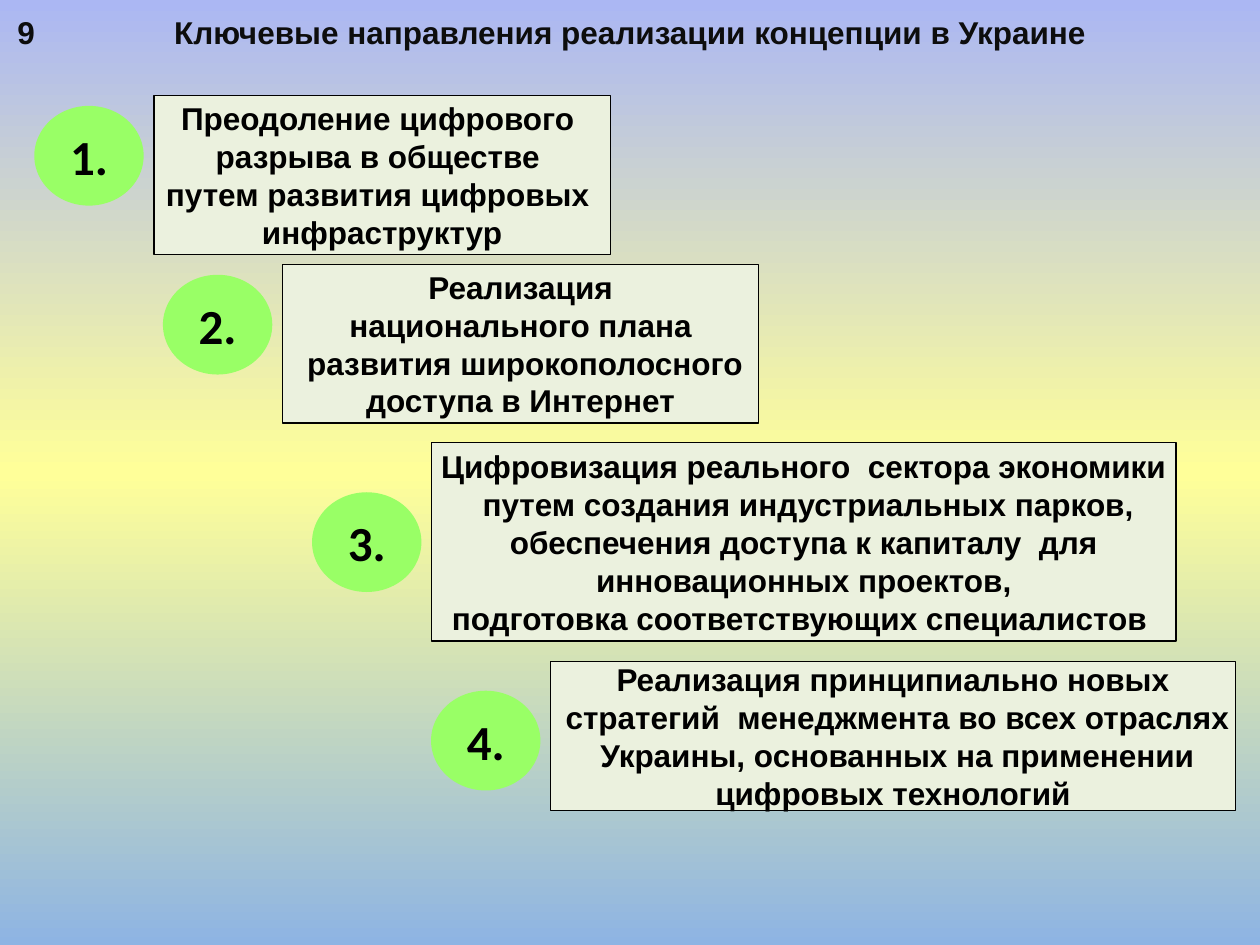
from copy import deepcopy

from pptx import Presentation
from pptx.dml.color import RGBColor
from pptx.enum.shapes import MSO_SHAPE
from pptx.enum.text import MSO_ANCHOR, PP_ALIGN
from pptx.oxml.ns import qn
from pptx.util import Pt

RECTANGLE = MSO_SHAPE.RECTANGLE
OVAL = MSO_SHAPE.OVAL
MIDDLE = MSO_ANCHOR.MIDDLE
LEFT = PP_ALIGN.LEFT
CENTER = PP_ALIGN.CENTER

BADGE_OFFSET, BADGE_WIDTH, BADGE_HEIGHT = 68.4, 62.5, 57

directions = [
    (88, 54.7, 260.7, 90.7, 60.5, [
        "Преодоление цифрового ",
        "разрыва в обществе ",
        "путем развития цифровых ",
        "инфраструктур",
    ]),
    (161.5, 151, 272, 90.7, 157, [
        "Реализация",
        "национального плана",
        " развития широкополосного",
        " доступа в Интернет ",
    ]),
    (246.7, 253, 425.3, 113.3, 281.3, [
        "Цифровизация реального  сектора экономики",
        " путем создания индустриальных парков,",
        " обеспечения доступа к капиталу  для ",
        "инновационных проектов,",
        "подготовка соответствующих специалистов ",
    ]),
    (314.7, 378, 391.3, 85, 394.7, [
        "Реализация принципиально новых",
        " стратегий  менеджмента во всех отраслях",
        " Украины, основанных на применении",
        " цифровых технологий ",
    ]),
]


def color(value):
    return RGBColor.from_string(value)


def write(shape, lines, font, size, ink, align, wrap):
    frame = shape.text_frame
    frame.word_wrap = wrap
    frame.text = "\n".join(lines)
    for paragraph in frame.paragraphs:
        paragraph.alignment = align
        paragraph.font.name = font
        paragraph.font.size = Pt(size)
        paragraph.font.bold = True
        paragraph.font.color.rgb = color(ink)


prs = Presentation()
prs.slide_width, prs.slide_height = Pt(720), Pt(540)
slide = prs.slides.add_slide(prs.slide_layouts[6])

backdrop = slide.background.fill
backdrop.gradient()
backdrop.gradient_angle = 90
stop_list = slide.element.find(".//" + qn("a:gsLst"))
stop_list.append(deepcopy(stop_list[0]))
stops = [(0, "8EB4E3"), (0.5, "FFFF99"), (1, "ABB7F3")]
for stop, (position, tint) in zip(backdrop.gradient_stops, stops):
    stop.position = position
    stop.color.rgb = color(tint)

for number, (left, top, width, height, badge_top, lines) in enumerate(directions, 1):
    direction = slide.shapes.add_shape(RECTANGLE, Pt(left), Pt(top), Pt(width), Pt(height))
    direction.line.color.rgb = color("000000")
    direction.line.width = Pt(0.75)
    write(direction, lines, "Arial", 18, "000000", CENTER, False)

    badge = slide.shapes.add_shape(
        OVAL, Pt(left - BADGE_OFFSET), Pt(badge_top), Pt(BADGE_WIDTH), Pt(BADGE_HEIGHT))
    badge.line.fill.background()
    write(badge, [f"{number}."], "Calibri", 28, "000000", CENTER, False)

    for shape, fill in ((direction, "EBF1DE"), (badge, "99FF66")):
        shape.shadow.inherit = False
        shape.fill.solid()
        shape.fill.fore_color.rgb = color(fill)
        shape.text_frame.vertical_anchor = MIDDLE

title = slide.shapes.add_textbox(Pt(0), Pt(3.6), Pt(720), Pt(29))
write(title, ["Ключевые направления реализации концепции в Украине"],
      "Arial", 18, "0D0D0D", CENTER, True)

page_number = slide.shapes.add_textbox(Pt(2.9), Pt(3.6), Pt(39.6), Pt(29))
write(page_number, ["9"], "Arial", 18, "0D0D0D", LEFT, True)

prs.save("out.pptx")
